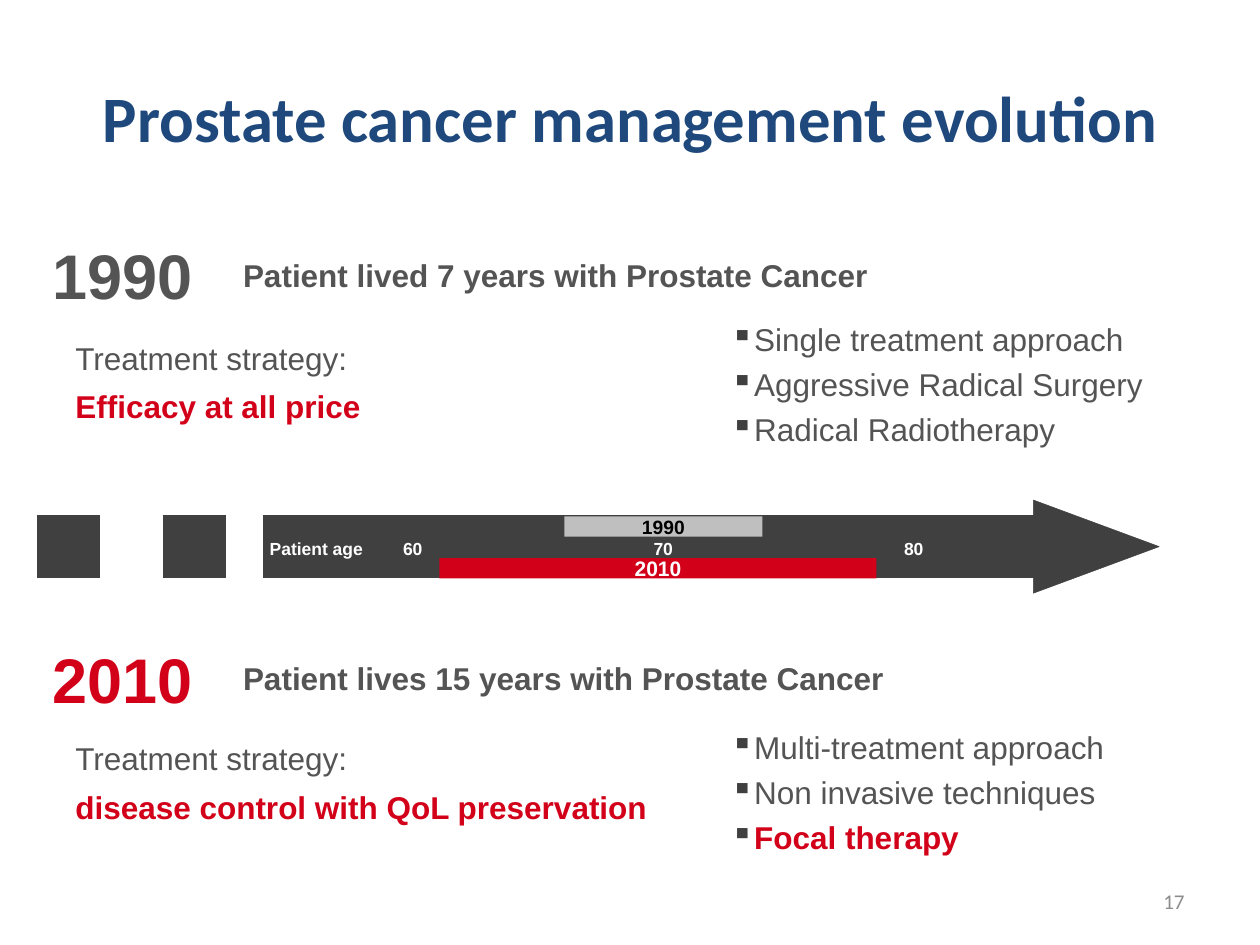
from lxml import etree
from pptx import Presentation
from pptx.dml.color import RGBColor
from pptx.enum.dml import MSO_LINE
from pptx.enum.shapes import MSO_CONNECTOR, MSO_SHAPE
from pptx.enum.text import MSO_ANCHOR, PP_ALIGN
from pptx.oxml.ns import qn
from pptx.util import Cm, Pt

LEFT, CENTER, RIGHT = PP_ALIGN.LEFT, PP_ALIGN.CENTER, PP_ALIGN.RIGHT
TOP, MIDDLE = MSO_ANCHOR.TOP, MSO_ANCHOR.MIDDLE
STRAIGHT = MSO_CONNECTOR.STRAIGHT
RECT, TRIANGLE = MSO_SHAPE.RECTANGLE, MSO_SHAPE.ISOSCELES_TRIANGLE
DOTTED = MSO_LINE.ROUND_DOT

NAVY, GREY, DARK, RED = "1F497D", "545454", "404040", "D20019"
SILVER, WHITE, BLACK, PALE = "BFBFBF", "FFFFFF", "000000", "8C8C8C"
AXIS_Y = 11.02

ERAS = [
    {
        "year": "1990", "color": GREY, "tops": (4.65, 5.03, 6.71, 6.32),
        "headline": "Patient lived 7 years with Prostate Cancer",
        "strategy": "Efficacy at all price",
        "treatments": [("Single treatment approach", GREY, False),
                       ("Aggressive Radical Surgery", GREY, False),
                       ("Radical Radiotherapy", GREY, False)],
    },
    {
        "year": "2010", "color": RED, "tops": (12.78, 13.16, 14.78, 14.55),
        "headline": "Patient lives 15 years with Prostate Cancer",
        "strategy": "disease control with QoL preservation",
        "treatments": [("Multi-treatment approach", GREY, False),
                       ("Non invasive techniques", GREY, False),
                       ("Focal therapy", RED, True)],
    },
]


def rgb(value):
    return RGBColor.from_string(value)


def add_run(p, text, size, color, bold=False, font="Arial"):
    r = p.add_run()
    r.text = text
    r.font.name = font
    r.font.size = Pt(size)
    r.font.bold = bold
    r.font.color.rgb = rgb(color)


def add_bullet(p):
    pPr = p._p.get_or_add_pPr()
    pPr.set("marL", "0")
    pPr.set("indent", str(-Cm(0.95)))
    bu_color = etree.SubElement(pPr, qn("a:buClr"))
    etree.SubElement(bu_color, qn("a:srgbClr")).set("val", DARK)
    etree.SubElement(pPr, qn("a:buChar")).set("char", "▪")


def add_text(s, box, lines, size, align=LEFT, anchor=TOP, font="Arial",
             before=0, after=0, bullets=False):
    tf = s.shapes.add_textbox(*map(Cm, box)).text_frame
    tf.word_wrap = True
    tf.vertical_anchor = anchor
    for i, (text, color, bold) in enumerate(lines):
        p = tf.add_paragraph() if i else tf.paragraphs[0]
        p.alignment = align
        p.space_before = Pt(before if i else 0)
        p.space_after = Pt(after)
        if bullets:
            add_bullet(p)
        add_run(p, text, size, color, bold, font)


def add_axis(s, start, end, dash=None):
    line = s.shapes.add_connector(STRAIGHT, Cm(start), Cm(AXIS_Y), Cm(end), Cm(AXIS_Y))
    line.line.color.rgb = rgb(DARK)
    line.line.width = Pt(36)
    if dash is not None:
        line.line.dash_style = dash
    etree.SubElement(line._element.spPr, qn("a:effectLst"))


def add_solid(s, kind, box, fill):
    sp = s.shapes.add_shape(kind, *map(Cm, box))
    sp.shadow.inherit = False
    sp.fill.solid()
    sp.fill.fore_color.rgb = rgb(fill)
    sp.line.fill.background()
    return sp


def add_bar(s, box, fill, text, size, color):
    tf = add_solid(s, RECT, box, fill).text_frame
    tf.margin_top = tf.margin_bottom = 0
    tf.vertical_anchor = MIDDLE
    p = tf.paragraphs[0]
    p.alignment = CENTER
    add_run(p, text, size, color, True)


def add_era(s, era):
    year_y, headline_y, strategy_y, treatments_y = era["tops"]
    add_text(s, (0.81, year_y, 3.6, 1.8), [(era["year"], era["color"], True)], 36)
    add_text(s, (4.65, headline_y, 14.83, 1.02), [(era["headline"], GREY, True)], 18)
    strategy = [("Treatment strategy:", GREY, False), (era["strategy"], RED, True)]
    add_text(s, (1.27, strategy_y, 13.03, 1.75), strategy, 18, after=6)
    add_text(s, (14.48, treatments_y, 10.01, 2.87), era["treatments"], 18,
             before=4.2, bullets=True)


def add_timeline(s):
    add_axis(s, 5.31, 20.93)
    add_axis(s, 0.74, 5.54, DOTTED)
    arrowhead = add_solid(s, TRIANGLE, (21.16, 9.75, 1.88, 2.54), DARK)
    arrowhead.rotation = 90
    arrowhead.line.color.rgb = rgb(DARK)
    arrowhead.line.width = Pt(0.25)

    add_bar(s, (11.38, 10.41, 3.99, 0.41), SILVER, "1990", 11, BLACK)
    add_bar(s, (8.86, 11.25, 8.81, 0.41), RED, "2010", 12, WHITE)

    labels = [("Patient age", 4.52, 3.71)]
    labels += [(age, 7.57 + 5.05 * i, 1.5) for i, age in enumerate(("60", "70", "80"))]
    for text, left, width in labels:
        add_text(s, (left, 10.72, width, 0.69), [(text, WHITE, True)], 10, CENTER, MIDDLE)


def main():
    prs = Presentation()
    prs.slide_width, prs.slide_height = Cm(25.4), Cm(19.05)
    s = prs.slides.add_slide(prs.slide_layouts[6])
    add_text(s, (1.27, 0.76, 22.86, 3.18),
             [("Prostate cancer management evolution", NAVY, True)],
             37, CENTER, MIDDLE, "Calibri")
    for era in ERAS:
        add_era(s, era)
    add_timeline(s)
    add_text(s, (18.21, 17.65, 5.92, 1.02), [("17", PALE, False)], 12, RIGHT, MIDDLE, "Calibri")
    prs.save("out.pptx")


if __name__ == "__main__":
    main()
